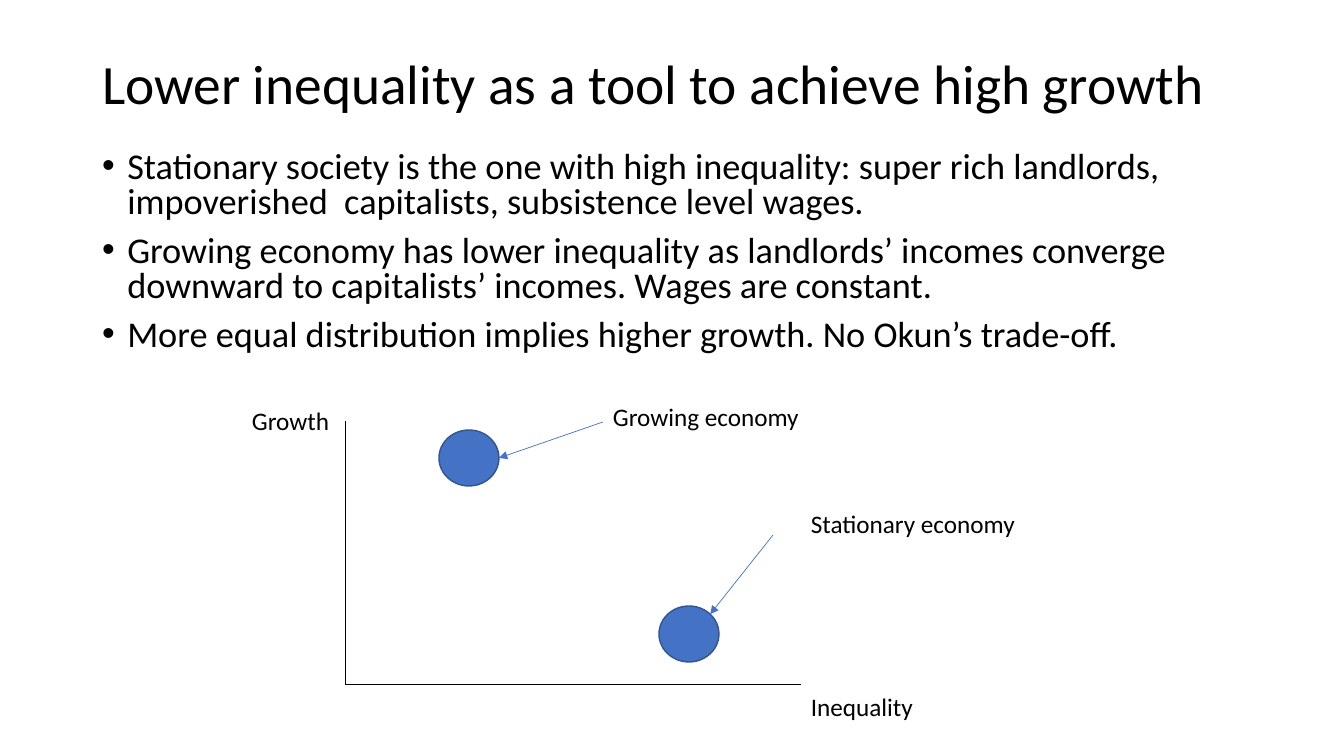
import math
import pptx
import pptx.dml.color
import pptx.enum.shapes
import pptx.enum.text
import pptx.oxml
import pptx.oxml.ns
import pptx.util

HEADING = "Lower inequality as a tool to achieve high growth"
POINTS = [
    "Stationary society is the one with high inequality: super rich landlords, "
    "impoverished  capitalists, subsistence level wages.",
    "Growing economy has lower inequality as landlords’ incomes converge "
    "downward to capitalists’ incomes. Wages are constant.",
    "More equal distribution implies higher growth. No Okun’s trade-off.",
]
HEADING_BOX = (92, 38, 1159, 98)
POINTS_BOX = (92, 147, 1159, 215)
ORIGIN = (345, 684)
INEQUALITY_END = (801, 684)
GROWTH_END = (345, 421)
LABELS = [
    ("Inequality", (801, 686, 257, 40)),
    ("Growth", (242, 400, 106, 40)),
    ("Growing economy", (603, 396, 217, 40)),
    ("Stationary economy", (801, 503, 257, 40)),
]
ECONOMIES = [
    {"center": (469, 458), "arrow_start": (603, 422), "touch_angle": 0},
    {"center": (689, 634), "arrow_start": (773, 535), "touch_angle": 45},
]
RADII = (30, 28)

THEME = {
    "font": "Calibri",
    "ink": "000000",
    "accent": "4472C4",
    "outline": "325491",
    "heading": 39.6,
    "points": 25.9,
    "label": 18,
    "hairline": 0.5,
    "border": 1,
}


def px(*lengths):
    return [round(length * 914400 / 100.8) for length in lengths]


def color(key):
    return pptx.dml.color.RGBColor.from_string(THEME[key])


def apply(target, values):
    for key, value in values.items():
        setattr(target, key, value)


def write(shape, texts, size, frame_format, paragraph_format):
    apply(shape.text_frame, {"word_wrap": True, **frame_format})
    shape.text_frame.text = "\n".join(texts)
    for paragraph in shape.text_frame.paragraphs:
        apply(paragraph, paragraph_format)
        font = paragraph.runs[0].font
        apply(font, {"name": THEME["font"], "size": pptx.util.Pt(THEME[size])})
        font.color.rgb = color("ink")


def place(shape, box):
    apply(shape, dict(zip(("left", "top", "width", "height"), px(*box))))


def draw_line(slide, start, end, ink, arrow=False):
    line = slide.shapes.add_connector(
        pptx.enum.shapes.MSO_CONNECTOR.STRAIGHT, *px(*start, *end))
    line.line.color.rgb = color(ink)
    line.line.width = pptx.util.Pt(THEME["hairline"])
    if arrow:
        pptx.oxml.ns.qn("a:tailEnd")
        head = line.line._get_or_add_ln().makeelement(
            pptx.oxml.ns.qn("a:tailEnd"), {"type": "triangle"})
        line.line._get_or_add_ln().append(head)
    properties = line._element.spPr
    properties.append(properties.makeelement(pptx.oxml.ns.qn("a:effectLst"), {}))


def main():
    deck = pptx.Presentation()
    deck.slide_width, deck.slide_height = px(1344, 756)
    slide = deck.slides.add_slide(deck.slide_layouts[1])
    heading, points = slide.placeholders
    no_fit = pptx.enum.text.MSO_AUTO_SIZE.NONE
    left = pptx.enum.text.PP_ALIGN.LEFT

    place(heading, HEADING_BOX)
    write(heading, [HEADING], "heading",
          {"auto_size": no_fit, "vertical_anchor": pptx.enum.text.MSO_ANCHOR.MIDDLE},
          {"alignment": left, "line_spacing": 0.9})

    place(points, POINTS_BOX)
    write(points, POINTS, "points",
          {"auto_size": no_fit, "vertical_anchor": pptx.enum.text.MSO_ANCHOR.TOP},
          {"alignment": left, "line_spacing": 0.8, "space_before": pptx.util.Pt(10)})
    indent = pptx.util.Inches(0.25)
    for paragraph in points.text_frame.paragraphs:
        properties = paragraph._p.get_or_add_pPr()
        properties.set("marL", str(indent))
        properties.set("indent", str(-indent))
        properties.append(properties.makeelement(
            pptx.oxml.ns.qn("a:buChar"), {"char": "•"}))

    for axis_end in (INEQUALITY_END, GROWTH_END):
        draw_line(slide, ORIGIN, axis_end, "ink")

    for economy in ECONOMIES:
        (x, y), (rx, ry) = economy["center"], RADII
        circle = slide.shapes.add_shape(
            pptx.enum.shapes.MSO_SHAPE.OVAL, *px(x - rx, y - ry, 2 * rx, 2 * ry))
        circle.shadow.inherit = False
        circle.fill.solid()
        circle.fill.fore_color.rgb = color("accent")
        circle.line.color.rgb = color("outline")
        circle.line.width = pptx.util.Pt(THEME["border"])
        angle = math.radians(economy["touch_angle"])
        touch = (x + rx * math.cos(angle), y - ry * math.sin(angle))
        draw_line(slide, economy["arrow_start"], touch, "accent", arrow=True)

    for text, box in LABELS:
        label = slide.shapes.add_textbox(*px(*box))
        write(label, [text], "label",
              {"auto_size": pptx.enum.text.MSO_AUTO_SIZE.SHAPE_TO_FIT_TEXT},
              {"alignment": left})

    deck.save("out.pptx")


if __name__ == "__main__":
    main()
